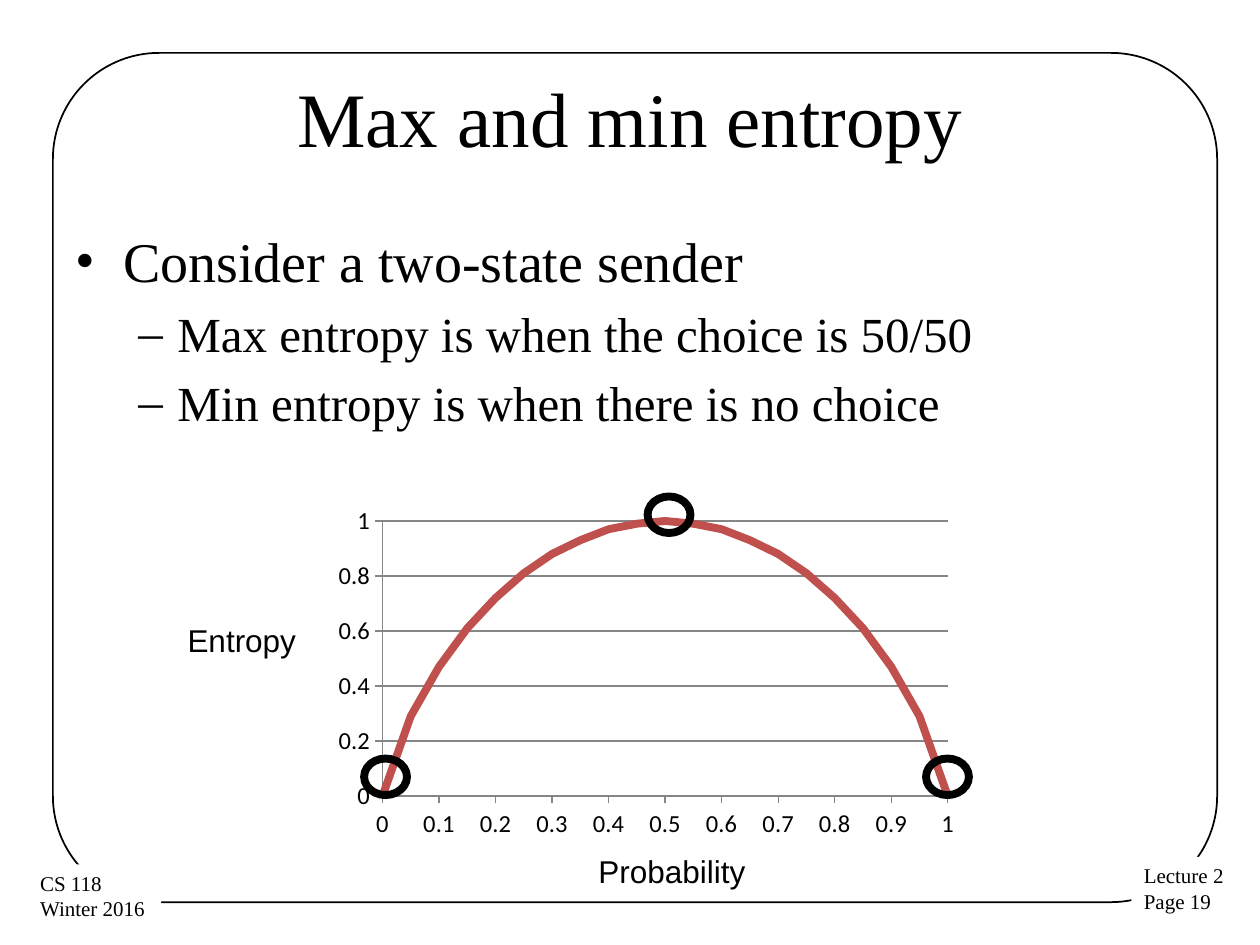
"""Builds a slide on the entropy of a two-state sender."""
from math import log2

from lxml import etree
from pptx import Presentation
from pptx.chart.data import XyChartData
from pptx.dml.color import RGBColor
from pptx.enum.chart import XL_CHART_TYPE, XL_TICK_MARK
from pptx.enum.shapes import MSO_SHAPE
from pptx.enum.text import MSO_ANCHOR, PP_ALIGN
from pptx.oxml.ns import qn
from pptx.util import Inches, Pt

SMOOTH = XL_CHART_TYPE.XY_SCATTER_SMOOTH_NO_MARKERS
OUTSIDE, NO_TICK = XL_TICK_MARK.OUTSIDE, XL_TICK_MARK.NONE
ROUNDED, RECTANGLE, OVAL = MSO_SHAPE.ROUNDED_RECTANGLE, MSO_SHAPE.RECTANGLE, MSO_SHAPE.OVAL
MIDDLE, TOP = MSO_ANCHOR.MIDDLE, MSO_ANCHOR.TOP
CENTER, LEFT = PP_ALIGN.CENTER, PP_ALIGN.LEFT

BLACK = RGBColor(0x00, 0x00, 0x00)
WHITE = RGBColor(0xFF, 0xFF, 0xFF)
GRAY = RGBColor(0x86, 0x86, 0x86)
RED = RGBColor(0xC0, 0x50, 0x4D)
SERIF, SANS, CHART_FONT = "Times New Roman", "Arial", "Calibri"


class EntropySlide:
    """Holds the style and the current slide."""

    def __init__(self, slide):
        self.slide = slide

    def box(self, left, top, width, height):
        return Inches(left), Inches(top), Inches(width), Inches(height)

    def style(self, font, size, name):
        font.size, font.name = Pt(size), name
        font.color.rgb = BLACK

    def fill_text(self, frame, lines, size, name, align=LEFT, anchor=TOP, wrap=False):
        frame.text = "\n".join(lines)
        for key, value in {"word_wrap": wrap, "vertical_anchor": anchor}.items():
            setattr(frame, key, value)
        for paragraph in frame.paragraphs:
            paragraph.alignment = align
            self.style(paragraph.runs[0].font, size, name)

    def title(self, text, *place):
        heading = self.slide.shapes.title
        fields = ("left", "top", "width", "height")
        for field, value in zip(fields, self.box(*place)):
            setattr(heading, field, value)
        self.fill_text(heading.text_frame, [text], 44, SERIF, CENTER, MIDDLE, True)

    def shape(self, kind, place, line=None, fill=None):
        shape = self.slide.shapes.add_shape(kind, *self.box(*place))
        shape.shadow.inherit = False
        if fill is None:
            shape.fill.background()
        else:
            shape.fill.solid()
            shape.fill.fore_color.rgb = fill
        if line is None:
            shape.line.fill.background()
        else:
            shape.line.color.rgb, shape.line.width = BLACK, Pt(line)
        return shape

    def frame(self, *place):
        self.shape(ROUNDED, place, line=1).adjustments[0] = 0.125

    def corner_note(self, lines, *place):
        note = self.shape(RECTANGLE, place, fill=WHITE)
        self.fill_text(note.text_frame, lines, 12, SERIF)

    def ring(self, left, top):
        self.shape(OVAL, (left, top, 0.34, 0.29), line=4.5)

    def axis_label(self, text, *place):
        label = self.slide.shapes.add_textbox(*self.box(*place))
        self.fill_text(label.text_frame, [text], 18, SANS)

    def bullets(self, items, *place):
        levels = ((32, "•", 0.38, 0.38), (28, "–", 0.81, 0.31))
        body = self.slide.shapes.add_textbox(*self.box(*place)).text_frame
        self.fill_text(body, [text for _, text in items], 32, SERIF, wrap=True)
        for paragraph, (level, _) in zip(body.paragraphs, items):
            size, mark, margin, hanging = levels[level]
            paragraph.level = level
            paragraph.runs[0].font.size = Pt(size)
            paragraph.space_before = Pt(size * 0.2)
            properties = paragraph._p.get_or_add_pPr()
            properties.set("marL", str(Inches(margin)))
            properties.set("indent", str(-Inches(hanging)))
            etree.SubElement(properties, qn("a:buFont")).set("typeface", SERIF)
            etree.SubElement(properties, qn("a:buChar")).set("char", mark)

    def axis(self, axis, step, gridlines):
        formats = {
            "minimum_scale": 0, "maximum_scale": 1, "major_unit": step,
            "major_tick_mark": OUTSIDE, "minor_tick_mark": NO_TICK,
            "has_major_gridlines": gridlines, "has_title": False,
        }
        for key, value in formats.items():
            setattr(axis, key, value)
        self.style(axis.tick_labels.font, 14, CHART_FONT)
        axis.tick_labels.number_format = "General"
        axis.tick_labels.number_format_is_linked = False
        lines = [axis.format.line]
        if gridlines:
            lines.append(axis.major_gridlines.format.line)
        for line in lines:
            line.color.rgb, line.width = GRAY, Pt(0.75)

    def plot_area(self, chart, **position):
        area = chart._chartSpace.chart.plotArea
        for old in area.findall(qn("c:layout")):
            area.remove(old)
        layout = etree.Element(qn("c:layout"))
        manual = etree.SubElement(layout, qn("c:manualLayout"))
        settings = {"layoutTarget": "inner", "xMode": "edge", "yMode": "edge", **position}
        for key, value in settings.items():
            etree.SubElement(manual, qn(f"c:{key}")).set("val", str(value))
        area.insert(0, layout)

    def curve(self, points, *place):
        data = XyChartData()
        series = data.add_series("Series 1")
        for probability, entropy in points:
            series.add_data_point(probability, entropy)
        chart = self.slide.shapes.add_chart(SMOOTH, *self.box(*place), data).chart
        chart.has_title = chart.has_legend = False
        self.style(chart.font, 10, CHART_FONT)
        chart.plots[0].vary_by_categories = False
        line = chart.plots[0].series[0]
        line.smooth = True
        line.format.line.color.rgb, line.format.line.width = RED, Pt(4.5)
        self.axis(chart.category_axis, 0.1, False)
        self.axis(chart.value_axis, 0.2, True)
        self.plot_area(chart, x=0.135, y=0.064, w=0.834, h=0.797)


def entropy(p):
    return round(-sum(q * log2(q) for q in (p, 1 - p) if q > 0), 2)


def main():
    deck = Presentation()
    deck.slide_width, deck.slide_height = Inches(10), Inches(7.5)
    page = EntropySlide(deck.slides.add_slide(deck.slide_layouts[5]))

    page.frame(0.42, 0.42, 9.24, 6.74)
    page.corner_note(["Lecture 2", "Page 19"], 8.98, 6.8, 0.84, 0.51)
    page.corner_note(["CS 118", "Winter 2016"], 0.22, 6.86, 1.06, 0.51)
    page.title("Max and min entropy", 0.5, 0.3, 9, 1.25)
    page.bullets([
        (0, "Consider a two-state sender"),
        (1, "Max entropy is when the choice is 50/50"),
        (1, "Min entropy is when there is no choice"),
    ], 0.5, 1.75, 9, 4.95)

    probabilities = [step / 20 for step in range(21)]
    page.curve([(p, entropy(p)) for p in probabilities], 2.31, 3.96, 5.38, 2.74)
    page.axis_label("Entropy", 1.39, 4.88, 1.07, 0.4)
    page.axis_label("Probability", 4.65, 6.71, 1.38, 0.4)
    for left, top in ((5.14, 3.94), (2.89, 6.02), (7.35, 6.02)):
        page.ring(left, top)

    deck.save("out.pptx")


if __name__ == "__main__":
    main()
